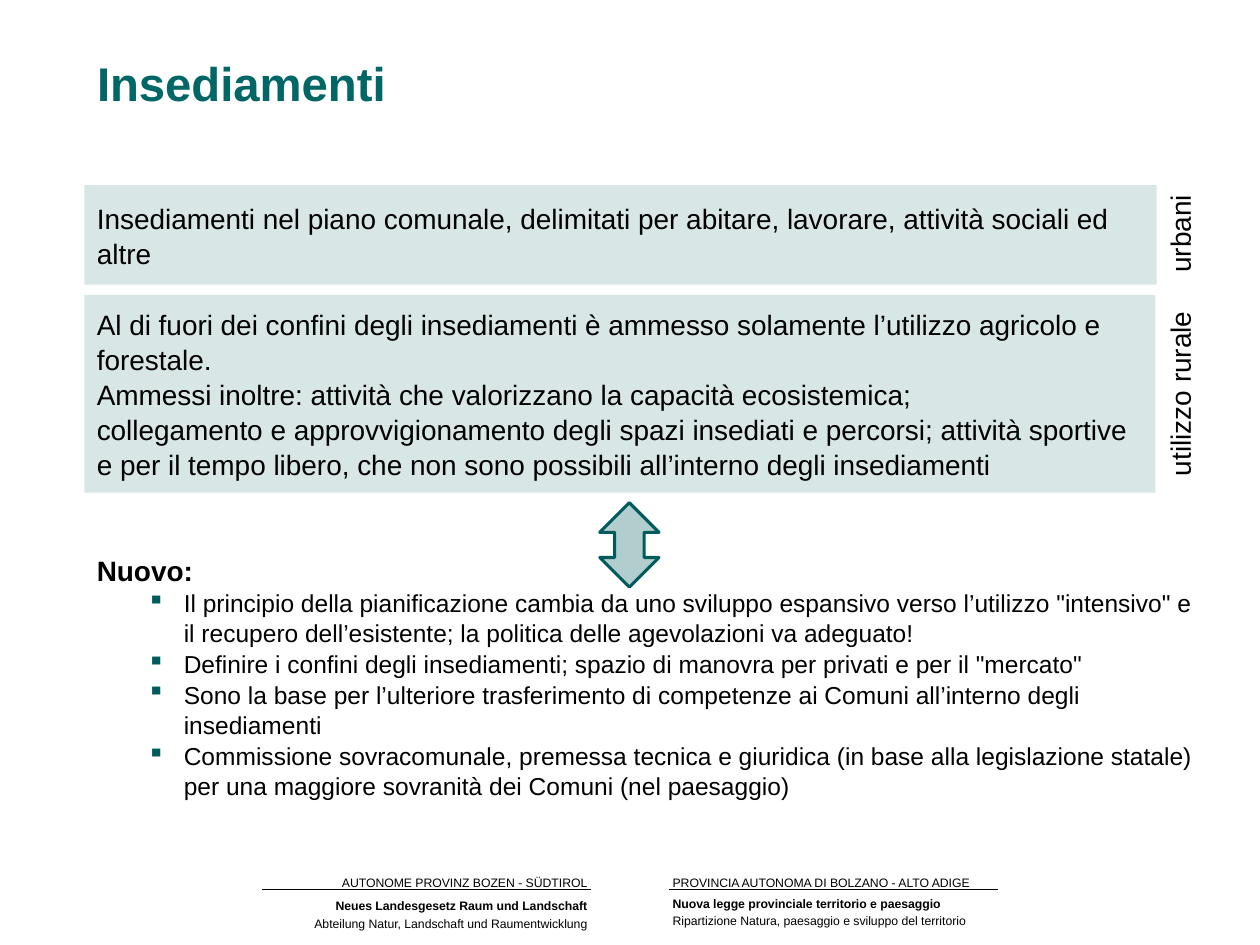
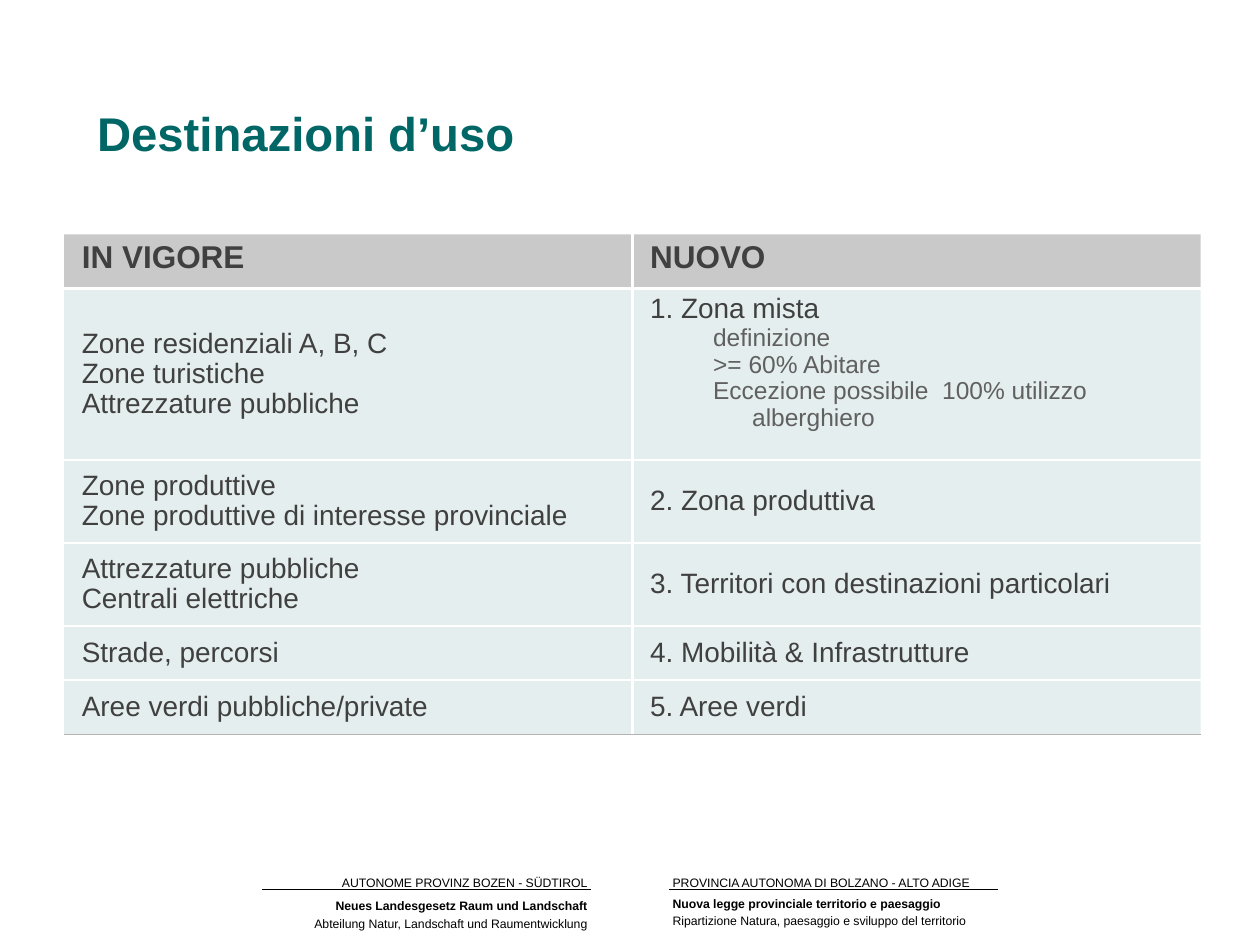
import pptx
import pptx.util
import pptx.dml.color
import pptx.enum.shapes
import pptx.enum.text
import pptx.oxml
import pptx.oxml.ns

Inches = pptx.util.Inches
Pt = pptx.util.Pt
RGBColor = pptx.dml.color.RGBColor
PP_ALIGN = pptx.enum.text.PP_ALIGN
ANCHOR = pptx.enum.text.MSO_ANCHOR
SHAPE = pptx.enum.shapes.MSO_SHAPE
qn = pptx.oxml.ns.qn

BLACK = RGBColor(0x00, 0x00, 0x00)
WHITE = RGBColor(0xFF, 0xFF, 0xFF)
TEAL = RGBColor(0x00, 0x5C, 0x5C)
TITLE_TEAL = RGBColor(0x00, 0x66, 0x66)
DARK_GREY = RGBColor(0x40, 0x40, 0x40)
MID_GREY = RGBColor(0x60, 0x60, 0x60)
HEAD_GREY = RGBColor(0xA6, 0xA6, 0xA6)
RULE_GREY = RGBColor(0xB3, 0xB3, 0xB3)

FONT = "Arial"
BODY_SPACING = 1.04
TABLE_SPACING = 0.97
LEFT = 0.67

FOOTER_RULES = [2.08, 5.31]
FOOTER_TEXTS = [
    ((2.58, 6.9, 2.18, 0.22), PP_ALIGN.RIGHT,
     ["AUTONOME PROVINZ BOZEN - SÜDTIROL"]),
    ((5.24, 6.9, 2.64, 0.22), PP_ALIGN.LEFT,
     ["PROVINCIA AUTONOMA DI BOLZANO - ALTO ADIGE"]),
    ((5.24, 7.04, 2.56, 0.37), PP_ALIGN.LEFT,
     ["Nuova legge provinciale territorio e paesaggio",
      "Ripartizione Natura, paesaggio e sviluppo del territorio"]),
    ((2.36, 7.06, 2.4, 0.37), PP_ALIGN.RIGHT,
     ["Neues Landesgesetz Raum und Landschaft",
      "Abteilung Natur, Landschaft und Raumentwicklung"]),
]

RURAL_RULES = [
    "Al di fuori dei confini degli insediamenti è ammesso solamente l’utilizzo agricolo e forestale.",
    "Ammessi inoltre: attività che valorizzano la capacità ecosistemica;",
    "collegamento e approvvigionamento degli spazi insediati e percorsi; attività sportive "
    "e per il tempo libero, che non sono possibili all’interno degli insediamenti",
]
URBAN_RULES = [
    "Insediamenti nel piano comunale, delimitati per abitare, lavorare, attività sociali ed altre",
]
NEWS = [
    "Il principio della pianificazione cambia da uno sviluppo espansivo verso l’utilizzo "
    "\"intensivo\" e il recupero dell’esistente; la politica delle agevolazioni va adeguato!",
    "Definire i confini degli insediamenti; spazio di manovra per privati e per il \"mercato\"",
    "Sono la base per l’ulteriore trasferimento di competenze ai Comuni all’interno degli insediamenti",
    "Commissione sovracomunale, premessa tecnica e giuridica (in base alla legislazione statale) "
    "per una maggiore sovranità dei Comuni (nel paesaggio)",
]

ZONES = [
    (0.43, ["IN VIGORE"], ["NUOVO"]),
    (1.36, ["Zone residenziali A, B, C", "Zone turistiche", "Attrezzature pubbliche"],
     ["1. Zona mista", "definizione", ">= 60% Abitare",
      "Eccezione possibile  100% utilizzo alberghiero"]),
    (0.66, ["Zone produttive", "Zone produttive di interesse provinciale"],
     ["2. Zona produttiva"]),
    (0.66, ["Attrezzature pubbliche", "Centrali elettriche"],
     ["3. Territori con destinazioni particolari"]),
    (0.43, ["Strade, percorsi"], ["4. Mobilità & Infrastrutture"]),
    (0.43, ["Aree verdi pubbliche/private"], ["5. Aree verdi"]),
]


def box(at):
    return [Inches(v) for v in at]


def apply(obj, values):
    for name, value in values.items():
        setattr(obj, name, value)


class Deck:
    def __init__(self):
        self.prs = pptx.Presentation()
        apply(self.prs, {"slide_width": Inches(10), "slide_height": Inches(7.5)})
        self.s = None

    def slide(self, title, at):
        self.s = self.prs.slides.add_slide(self.prs.slide_layouts[5])
        self.footer()
        sp = self.s.shapes.title
        apply(sp, dict(zip(("left", "top", "width", "height"), box(at))))
        apply(sp.text_frame, {"word_wrap": True, "vertical_anchor": ANCHOR.TOP,
                              "auto_size": pptx.enum.text.MSO_AUTO_SIZE.NONE})
        self.paras(sp.text_frame, [title], size=27, bold=True, color=TITLE_TEAL)

    def footer(self):
        for x in FOOTER_RULES:
            self.rule(x, 7.06, x + 2.61)
        for at, align, lines in FOOTER_TEXTS:
            tf = self.text(at, lines, wrap=False, size=7, align=align,
                           spacing=Pt(10) if len(lines) > 1 else 1.0)
            tf.paragraphs[0].runs[0].font.bold = len(lines) > 1

    def rule(self, x1, y, x2):
        cn = self.s.shapes.add_connector(pptx.enum.shapes.MSO_CONNECTOR.STRAIGHT,
                                         *box((x1, y, x2, y)))
        cn.line.color.rgb = BLACK
        cn.line.width = Pt(0.5)
        cn.element.spPr.append(self.xml("effectLst"))

    def xml(self, tag, inner="", attrs=""):
        ns = "http://schemas.openxmlformats.org/drawingml/2006/main"
        return pptx.oxml.parse_xml(f'<a:{tag} xmlns:a="{ns}" {attrs}>{inner}</a:{tag}>')

    def paras(self, tf, lines, **style):
        for i, line in enumerate(lines):
            p = tf.paragraphs[0] if i == 0 else tf.add_paragraph()
            self.para(p, line, **style)

    def para(self, p, line, size=16, color=BLACK, bold=False,
             align=PP_ALIGN.LEFT, spacing=BODY_SPACING):
        apply(p, {"alignment": align, "line_spacing": spacing})
        r = p.add_run()
        r.text = line
        apply(r.font, {"name": FONT, "size": Pt(size), "bold": bold})
        r.font.color.rgb = color

    def indent(self, p, margin, first, bullet=None):
        p.level = 1
        pPr = p._p.get_or_add_pPr()
        pPr.set("marL", str(Inches(margin)))
        pPr.set("indent", str(Inches(first)))
        if bullet:
            pPr.append(self.xml("buClr", f'<a:srgbClr val="{TEAL}"/>'))
            pPr.append(self.xml("buChar", attrs=f'char="{bullet}"'))

    def text(self, at, lines, wrap=True, turn=0, **style):
        sp = self.s.shapes.add_textbox(*box(at))
        sp.rotation = turn
        sp.text_frame.word_wrap = wrap
        self.paras(sp.text_frame, lines, **style)
        return sp.text_frame

    def tint(self, fill, element, color, percent):
        fill.solid()
        fill.fore_color.rgb = color
        clr = element.find(qn("a:solidFill")).find(qn("a:srgbClr"))
        clr.append(self.xml("alpha", attrs=f'val="{percent * 1000}"'))

    def shape(self, kind, at, percent, lines=()):
        sp = self.s.shapes.add_shape(kind, *box(at))
        sp.shadow.inherit = False
        self.tint(sp.fill, sp.element.spPr, TEAL, percent)
        sp.line.fill.background()
        apply(sp.text_frame, {"word_wrap": True, "vertical_anchor": ANCHOR.MIDDLE})
        self.paras(sp.text_frame, lines)
        return sp

    def borders(self, cell, sides):
        tcPr = cell._tc.get_or_add_tcPr()
        for i, (side, (color, width)) in enumerate(sides.items()):
            paint = f'<a:solidFill><a:srgbClr val="{color}"/></a:solidFill>' if color else "<a:noFill/>"
            tcPr.insert(i, self.xml(f"ln{side}", paint, f'w="{Pt(width)}"'))

    def table(self, at, rows):
        tb = self.s.shapes.add_table(len(rows), 2, *box(at)).table
        apply(tb, {"first_row": False, "horz_banding": False})
        none, white, grey = (None, 0), (WHITE, 1.5), (RULE_GREY, 1)
        last = len(rows) - 1
        for i, (height, *texts) in enumerate(rows):
            tb.rows[i].height = Inches(height)
            head = i == 0
            color, percent = (HEAD_GREY, 60) if head else (TEAL, 10)
            for j, lines in enumerate(texts):
                cell = tb.cell(i, j)
                top = head or len(lines) > 3
                apply(cell, {"margin_left": Inches(0.14), "margin_right": Inches(0.1),
                             "margin_top": Inches(0.05), "margin_bottom": Inches(0.05),
                             "vertical_anchor": ANCHOR.TOP if top else ANCHOR.MIDDLE})
                self.paras(cell.text_frame, lines, size=18 if head else 16, bold=head,
                           color=DARK_GREY, spacing=TABLE_SPACING)
                self.tint(cell.fill, cell._tc.get_or_add_tcPr(), color, percent)
                self.borders(cell, {"L": white if j else none, "R": none if j else white,
                                    "T": none if head else white,
                                    "B": grey if i == last else white})
        return tb


def settlements(deck):
    deck.slide("Insediamenti", (LEFT, 0.36, 8.66, 0.79))
    deck.shape(SHAPE.RECTANGLE, (LEFT, 2.34, 8.5, 1.57), 15, RURAL_RULES)
    deck.shape(SHAPE.RECTANGLE, (LEFT, 1.47, 8.51, 0.79), 15, URBAN_RULES)
    arrow = deck.shape(SHAPE.UP_DOWN_ARROW, (4.76, 3.99, 0.47, 0.67), 30)
    arrow.rotation = 180
    arrow.line.color.rgb = TEAL
    arrow.line.width = Pt(1.75)
    tf = deck.text((LEFT, 4.33, 8.98, 2.02), ["Nuovo:"], bold=True)
    for line in NEWS:
        p = tf.add_paragraph()
        deck.para(p, line, size=14)
        deck.indent(p, 0.69, -0.29, "▪")
    deck.text((8.85, 1.67, 1.01, 0.37), ["urbani"], turn=270, align=PP_ALIGN.CENTER)
    deck.text((8.57, 2.94, 1.57, 0.37), ["utilizzo rurale"], turn=270, align=PP_ALIGN.CENTER)


def land_uses(deck):
    deck.slide("Destinazioni d’uso", (LEFT, 0.76, 8.66, 0.71))
    tb = deck.table((0.51, 1.86, 9.02, 3.95), ZONES)
    for p in tb.cell(1, 1).text_frame.paragraphs[1:]:
        deck.indent(p, 0.81, -0.31)
        p.runs[0].font.size = Pt(14)
        p.runs[0].font.color.rgb = MID_GREY


def main():
    deck = Deck()
    settlements(deck)
    land_uses(deck)
    deck.prs.save("out.pptx")


if __name__ == "__main__":
    main()
